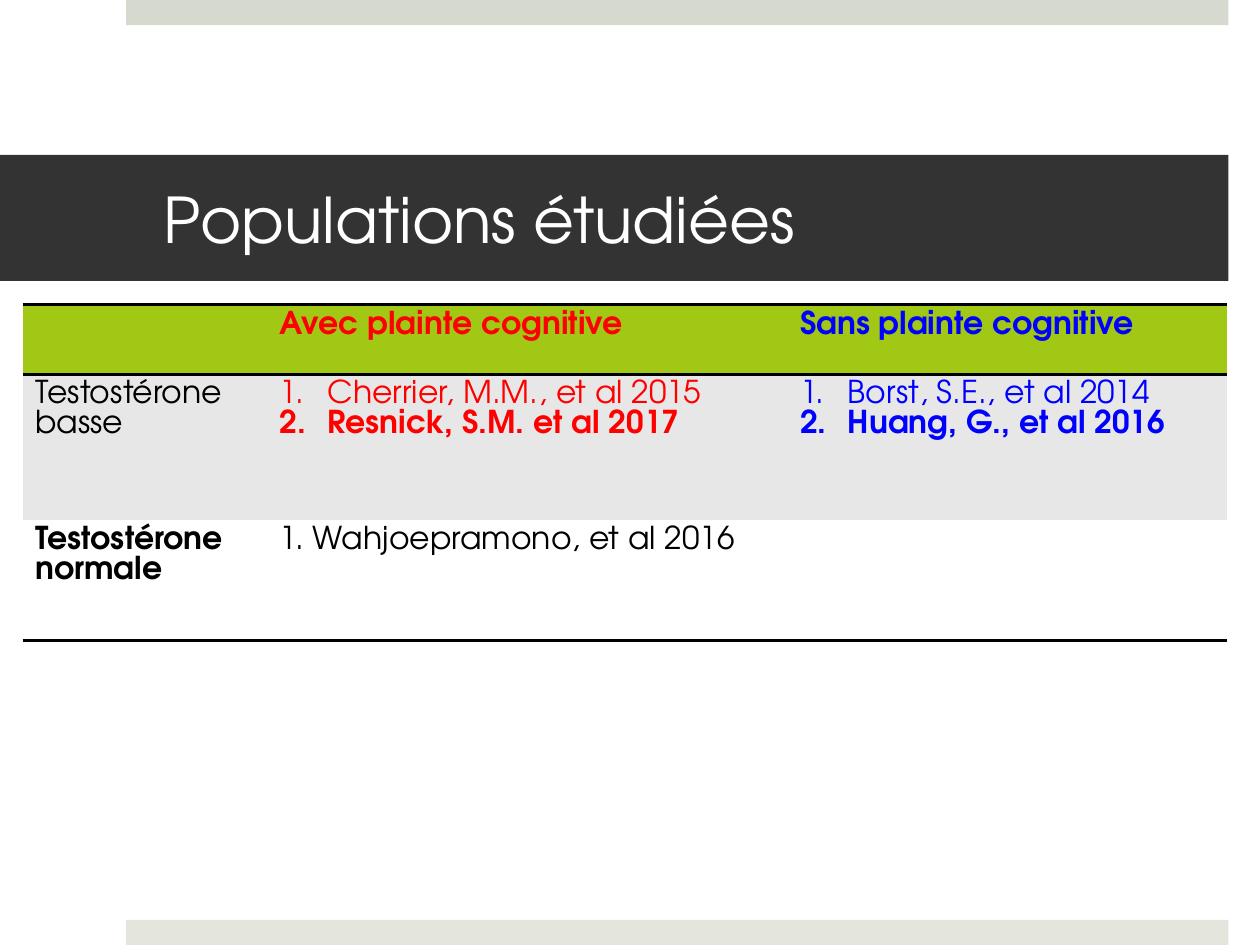
"""Build the slide on the populations studied, with its table of references."""
import pptx
import pptx.dml.color
import pptx.enum.shapes
import pptx.enum.text
import pptx.oxml.ns
import pptx.util
from lxml import etree

Inches = pptx.util.Inches
FONT = "TeX Gyre Adventor"
COLORS = {
    "top": "D6D9CD", "bottom": "E4E6DE", "title": "333333", "white": "FFFFFF",
    "black": "000000", "red": "FF0000", "blue": "0000FF",
    "header": "A2C816", "band": "E7E7E7",
}
TITLE = "Populations étudiées"
BARS = [("top", 1, 0, 8.75, 0.2), ("bottom", 1, 7.3, 8.75, 0.2), ("title", 0, 1.23, 9.75, 1)]
COLS = [1.94, 4.13, 3.49]
ROWS = [0.55, 1.16, 0.95]
ROW_FILLS = ["header", "band", "white"]
RULES = [("lnT", "lnB"), ("lnT",), ("lnB",)]
CELLS = [
    [[],
     [("Avec plainte cognitive", {"color": "red", "bold": True})],
     [("Sans plainte cognitive", {"color": "blue", "bold": True})]],
    [[("Testostérone basse", {})],
     [("Cherrier, M.M., et al 2015", {"color": "red", "numbered": True}),
      ("Resnick, S.M. et al 2017", {"color": "red", "bold": True, "numbered": True})],
     [("Borst, S.E., et al 2014", {"color": "blue", "numbered": True}),
      ("Huang, G., et al 2016", {"color": "blue", "bold": True, "numbered": True})]],
    [[("Testostérone normale", {"bold": True})],
     [("1. Wahjoepramono, et al 2016", {})],
     []],
]


def rgb(name):
    return pptx.dml.color.RGBColor.from_string(COLORS[name])


def add_node(parent, tag, **attrs):
    return etree.SubElement(parent, pptx.oxml.ns.qn(tag), attrs)


def write(p, text, size=18, color="black", bold=False, numbered=False):
    p.alignment = pptx.enum.text.PP_ALIGN.LEFT
    r = p.add_run()
    r.text = text
    r.font.name, r.font.size, r.font.bold = FONT, pptx.util.Pt(size), bold
    r.font.color.rgb = rgb(color)
    if numbered:
        pPr = p._p.get_or_add_pPr()
        pPr.set("marL", str(Inches(0.38)))
        pPr.set("indent", str(-Inches(0.38)))
        add_node(pPr, "a:buFont", typeface="+mj-lt")
        add_node(pPr, "a:buAutoNum", type="arabicPeriod")


def add_bar(slide, fill, *box):
    sp = slide.shapes.add_shape(pptx.enum.shapes.MSO_SHAPE.RECTANGLE, *map(Inches, box))
    sp.shadow.inherit = False
    sp.fill.solid()
    sp.fill.fore_color.rgb = rgb(fill)
    sp.line.fill.background()
    return sp


def set_borders(cell, ruled):
    tcPr = cell._tc.get_or_add_tcPr()
    for i, side in enumerate(("lnL", "lnR", "lnT", "lnB")):
        ln = etree.Element(pptx.oxml.ns.qn("a:" + side), w=str(pptx.util.Pt(2)))
        if side in ruled:
            add_node(add_node(ln, "a:solidFill"), "a:srgbClr", val=COLORS["black"])
        else:
            add_node(ln, "a:noFill")
        tcPr.insert(i, ln)


def add_references(slide):
    box = (0.18, 2.42, sum(COLS), sum(ROWS))
    table = slide.shapes.add_table(len(ROWS), len(COLS), *map(Inches, box)).table
    table.first_row = table.horz_banding = False
    for col, width in zip(table.columns, COLS):
        col.width = Inches(width)
    for row, height, fill, ruled, contents in zip(table.rows, ROWS, ROW_FILLS, RULES, CELLS):
        row.height = Inches(height)
        for cell, paragraphs in zip(row.cells, contents):
            cell.fill.solid()
            cell.fill.fore_color.rgb = rgb(fill)
            set_borders(cell, ruled)
            tf = cell.text_frame
            for i, (text, style) in enumerate(paragraphs):
                write(tf.add_paragraph() if i else tf.paragraphs[0], text, **style)


def main():
    prs = pptx.Presentation()
    prs.slide_width, prs.slide_height = Inches(10), Inches(7.5)
    slide = prs.slides.add_slide(prs.slide_layouts[6])
    bars = {bar[0]: add_bar(slide, *bar) for bar in BARS}
    tf = bars["title"].text_frame
    tf.word_wrap = True
    tf.vertical_anchor = pptx.enum.text.MSO_ANCHOR.MIDDLE
    tf.margin_left, tf.margin_right = Inches(1.3), Inches(0.3)
    write(tf.paragraphs[0], TITLE, size=36, color="white")
    add_references(slide)
    prs.save("out.pptx")


if __name__ == "__main__":
    main()
